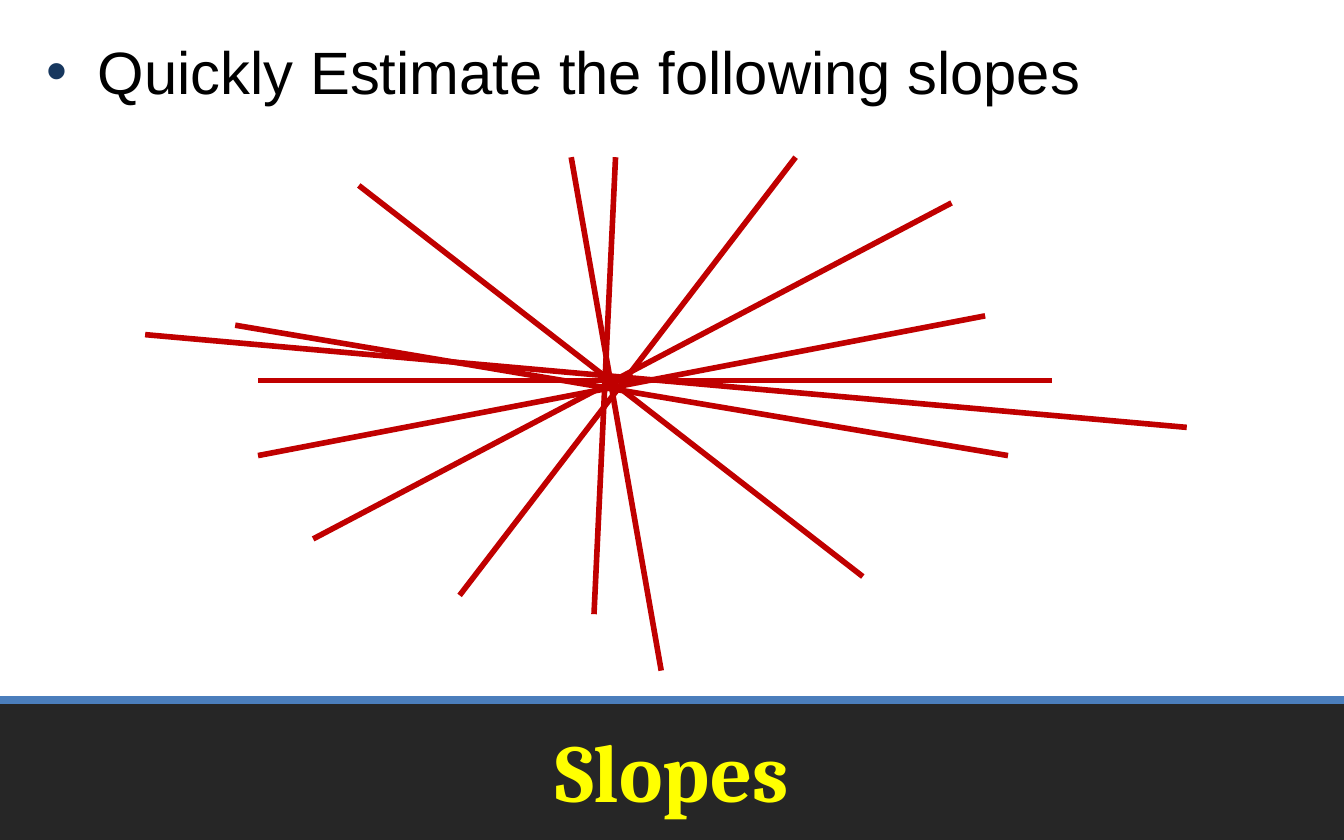
from lxml import etree
from pptx import Presentation
from pptx.dml.color import RGBColor
from pptx.enum.shapes import MSO_CONNECTOR as Conn, MSO_SHAPE as Shape
from pptx.enum.text import MSO_ANCHOR as Anchor, PP_ALIGN as Align
from pptx.oxml.ns import qn
from pptx.util import Inches, Pt

COLORS = {"band": "262626", "rule": "4B7EBC", "title": "FFFF00",
          "text": "000000", "bullet": "17375E", "slope": "C00000"}
WIDTH, HEIGHT, BAND = 10, 6.25, 5.21

# Ends of each slope line: x1, y1, x2, y2
SLOPES = [
    (2.33, 4.01, 7.08, 1.51),
    (1.92, 2.83, 7.83, 2.83),
    (3.42, 4.43, 5.92, 1.17),
    (1.75, 2.42, 7.5, 3.39),
    (6.42, 4.29, 2.67, 1.38),
    (4.42, 4.57, 4.58, 1.17),
    (1.92, 3.39, 7.33, 2.35),
    (8.83, 3.18, 1.08, 2.49),
    (4.92, 4.99, 4.25, 1.17),
]


def color(name):
    return RGBColor.from_string(COLORS[name])


class Deck:
    def __init__(self):
        self.prs = Presentation()
        self.prs.slide_width = Inches(WIDTH)
        self.prs.slide_height = Inches(HEIGHT)
        self.slide = self.prs.slides.add_slide(self.prs.slide_layouts[5])
        self.shapes = self.slide.shapes

    def font(self, para, name, size, fill, bold=False):
        font = para.font
        font.name, font.size, font.bold = name, Pt(size), bold
        font.color.rgb = color(fill)

    def rect(self, x, y, w, h, fill):
        box = self.shapes.add_shape(
            Shape.RECTANGLE, Inches(x), Inches(y), Inches(w), Inches(h))
        box.shadow.inherit = False
        box.fill.solid()
        box.fill.fore_color.rgb = color(fill)
        box.line.fill.background()

    def line(self, x1, y1, x2, y2, fill, width):
        line = self.shapes.add_connector(
            Conn.STRAIGHT, Inches(x1), Inches(y1), Inches(x2), Inches(y2))
        line.line.color.rgb = color(fill)
        line.line.width = Pt(width)
        etree.SubElement(line._element.spPr, qn("a:effectLst"))

    def title(self, text, x, y, w, h):
        box = self.shapes.title
        box.left, box.top = Inches(x), Inches(y)
        box.width, box.height = Inches(w), Inches(h)
        frame = box.text_frame
        frame.text = text
        frame.vertical_anchor = Anchor.MIDDLE
        para = frame.paragraphs[0]
        para.alignment = Align.CENTER
        self.font(para, "Cambria", 44, "title", bold=True)
        # Bring the title in front of the band
        self.shapes._spTree.append(box._element)

    def bullet(self, text, x, y, w, h):
        box = self.shapes.add_textbox(
            Inches(x), Inches(y), Inches(w), Inches(h))
        frame = box.text_frame
        frame.word_wrap = True
        frame.text = text
        para = frame.paragraphs[0]
        para.space_before = Pt(3.6)
        self.font(para, "Arial", 32, "text")
        props = para._p.get_or_add_pPr()
        props.set("marL", str(Inches(0.38)))
        props.set("indent", str(Inches(-0.38)))
        # Bullet parts follow the spacing and precede the font
        tint = etree.Element(qn("a:buClr"))
        etree.SubElement(tint, qn("a:srgbClr"), val=COLORS["bullet"])
        face = etree.Element(qn("a:buFont"), typeface="Arial")
        mark = etree.Element(qn("a:buChar"), char="•")
        for part in (tint, face, mark):
            props.find(qn("a:defRPr")).addprevious(part)


def main():
    deck = Deck()
    # Footer band with its title
    deck.rect(0, BAND, WIDTH, HEIGHT - BAND, "band")
    deck.line(0, BAND, WIDTH, BAND, "rule", 4)
    deck.title("Slopes", 0.25, BAND, 9.5, HEIGHT - BAND)
    # Task
    deck.bullet("Quickly Estimate the following slopes", 0.25, 0.21, 9.5, 4.93)
    # Slope lines
    for ends in SLOPES:
        deck.line(*ends, "slope", 3)
    deck.prs.save("out.pptx")


if __name__ == "__main__":
    main()
